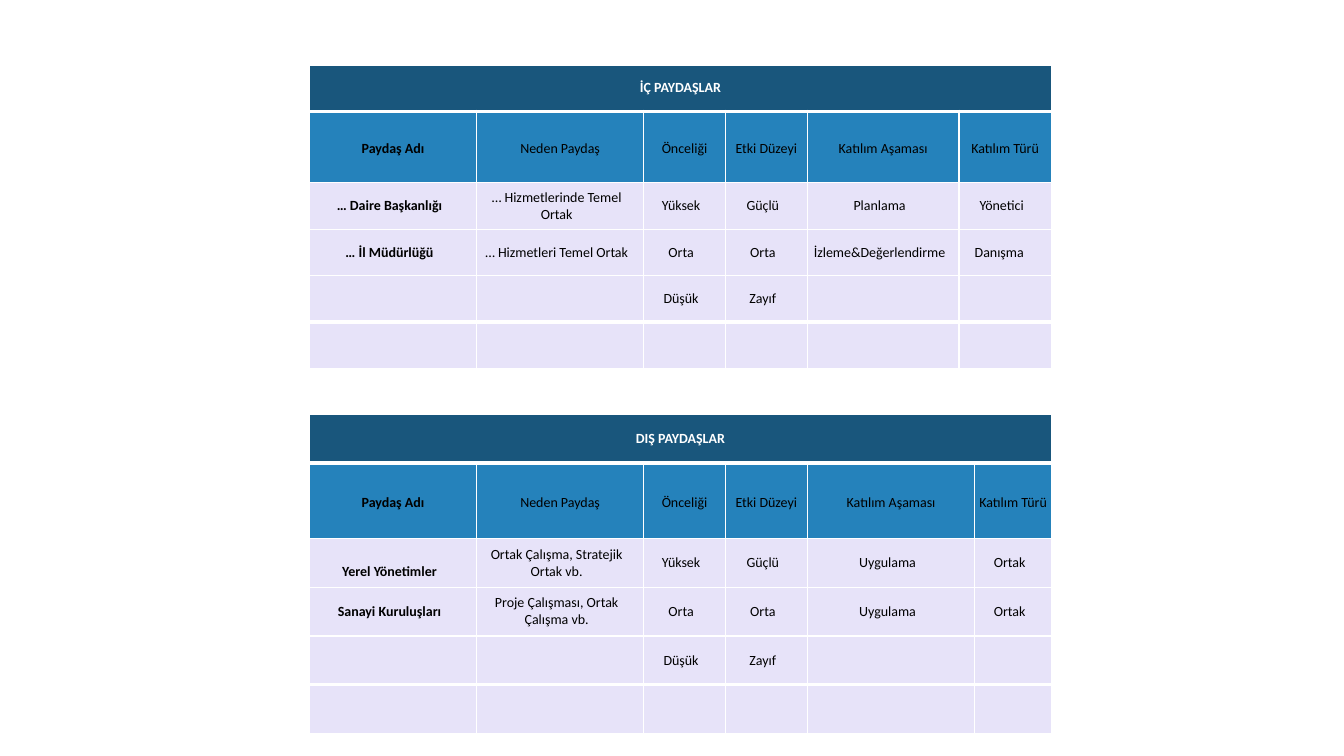
from dataclasses import dataclass, field

from lxml.etree import SubElement
from pptx import Presentation
from pptx.dml.color import RGBColor
from pptx.enum.text import MSO_ANCHOR as Anchor, PP_ALIGN as Align
from pptx.oxml.ns import qn
from pptx.util import Pt

WHITE = RGBColor(0xFF, 0xFF, 0xFF)
BLACK = RGBColor(0x00, 0x00, 0x00)
NAVY = RGBColor(0x19, 0x56, 0x7C)
BLUE = RGBColor(0x25, 0x82, 0xBB)
LILAC = RGBColor(0xE7, 0xE3, 0xF9)

LEFT, WIDTH = 221, 530
THIN, THICK = 1, 3
BODY_INSET = 5
HEADINGS = ["Paydaş Adı", "Neden Paydaş", "Önceliği", "Etki Düzeyi",
            "Katılım Aşaması", "Katılım Türü"]
LOWEST_LEVELS = ["", "", "Düşük", "Zayıf", "", ""]
EMPTY = [""] * len(HEADINGS)


@dataclass
class StakeholderTable:
    title: str
    top: float
    row_height: float
    heading_height: float
    col_widths: list[float]
    stakeholders: list[list[str]]
    top_insets: dict[str, float] = field(default_factory=dict)
    right_insets: dict[str, float] = field(default_factory=dict)


TABLES = [
    StakeholderTable(
        "İÇ PAYDAŞLAR", 46.4, 33.2, 51, [119.4, 119.4, 58.4, 58.4, 108.4, 66],
        [["… Daire Başkanlığı", "… Hizmetlerinde Temel Ortak", "Yüksek",
          "Güçlü", "Planlama", "Yönetici"],
         ["… İl Müdürlüğü", "… Hizmetleri Temel Ortak", "Orta", "Orta",
          "İzleme&Değerlendirme", "Danışma"]],
        right_insets={"Danışma": 8.5}),
    StakeholderTable(
        "DIŞ PAYDAŞLAR", 296.2, 34.7, 54, [119.4, 119.4, 58.4, 58.4, 119.8, 54.6],
        [["Yerel Yönetimler", "Ortak Çalışma, Stratejik Ortak vb.", "Yüksek",
          "Güçlü", "Uygulama", "Ortak"],
         ["Sanayi Kuruluşları", "Proje Çalışması, Ortak Çalışma vb.", "Orta",
          "Orta", "Uygulama", "Ortak"]],
        top_insets={"Yerel Yönetimler": 12}),
]


def set_borders(cell, top: float, bottom: float) -> None:
    """Draw white borders; they must come before the fill in the cell XML."""
    tc_pr = cell._tc.get_or_add_tcPr()
    widths = {"a:lnL": THIN, "a:lnR": THIN, "a:lnT": top, "a:lnB": bottom}
    for tag, width in widths.items():
        line = SubElement(tc_pr, qn(tag), w=str(Pt(width)))
        fill = SubElement(line, qn("a:solidFill"))
        SubElement(fill, qn("a:srgbClr"), val=str(WHITE))


def fill_cell(cell, text: str, *, fill: RGBColor, color: RGBColor = BLACK,
              bold: bool = False, spacing: float = 1, top_inset: float = 0,
              right_inset: float = 0) -> None:
    cell.fill.solid()
    cell.fill.fore_color.rgb = fill
    cell.vertical_anchor = Anchor.MIDDLE
    cell.margin_left = cell.margin_bottom = 0
    cell.margin_top, cell.margin_right = Pt(top_inset), Pt(right_inset)
    p = cell.text_frame.paragraphs[0]
    p.alignment = Align.CENTER
    p.line_spacing = spacing
    p.font.size = Pt(10)
    if text:
        r = p.add_run()
        r.text = text
        r.font.name, r.font.size = "Calibri", Pt(10)
        r.font.bold, r.font.color.rgb = bold, color


def add_stakeholder_table(s, spec_: StakeholderTable) -> None:
    rows = [[spec_.title] + EMPTY[1:], HEADINGS, *spec_.stakeholders,
            LOWEST_LEVELS, EMPTY]
    heights = [spec_.row_height] * len(rows)
    heights[1] = spec_.heading_height
    table = s.shapes.add_table(len(rows), len(HEADINGS), Pt(LEFT), Pt(spec_.top),
                               Pt(WIDTH), Pt(sum(heights))).table
    table.first_row = table.horz_banding = False
    for column, width in zip(table.columns, spec_.col_widths):
        column.width = Pt(width)

    # Thick rules lie below the title and above the last row
    thick_edges = {1, len(rows) - 1}
    for i, texts in enumerate(rows):
        table.rows[i].height = Pt(heights[i])
        for j, text in enumerate(texts):
            cell = table.cell(i, j)
            set_borders(cell, THICK if i in thick_edges else THIN,
                        THICK if i + 1 in thick_edges else THIN)
            if i == 0:
                fill_cell(cell, text, fill=NAVY, color=WHITE, bold=True)
            elif i == 1:
                fill_cell(cell, text, fill=BLUE, bold=j == 0, spacing=1.15)
            else:
                fill_cell(cell, text, fill=LILAC, bold=j == 0,
                          top_inset=spec_.top_insets.get(text, 0),
                          right_inset=spec_.right_insets.get(text, BODY_INSET))
    table.cell(0, 0).merge(table.cell(0, len(HEADINGS) - 1))


def main() -> None:
    prs = Presentation()
    prs.slide_width, prs.slide_height = Pt(960), Pt(540)
    s = prs.slides.add_slide(prs.slide_layouts[6])

    # Internal and external stakeholders
    for stakeholder_table in TABLES:
        add_stakeholder_table(s, stakeholder_table)

    prs.save("out.pptx")


if __name__ == "__main__":
    main()
